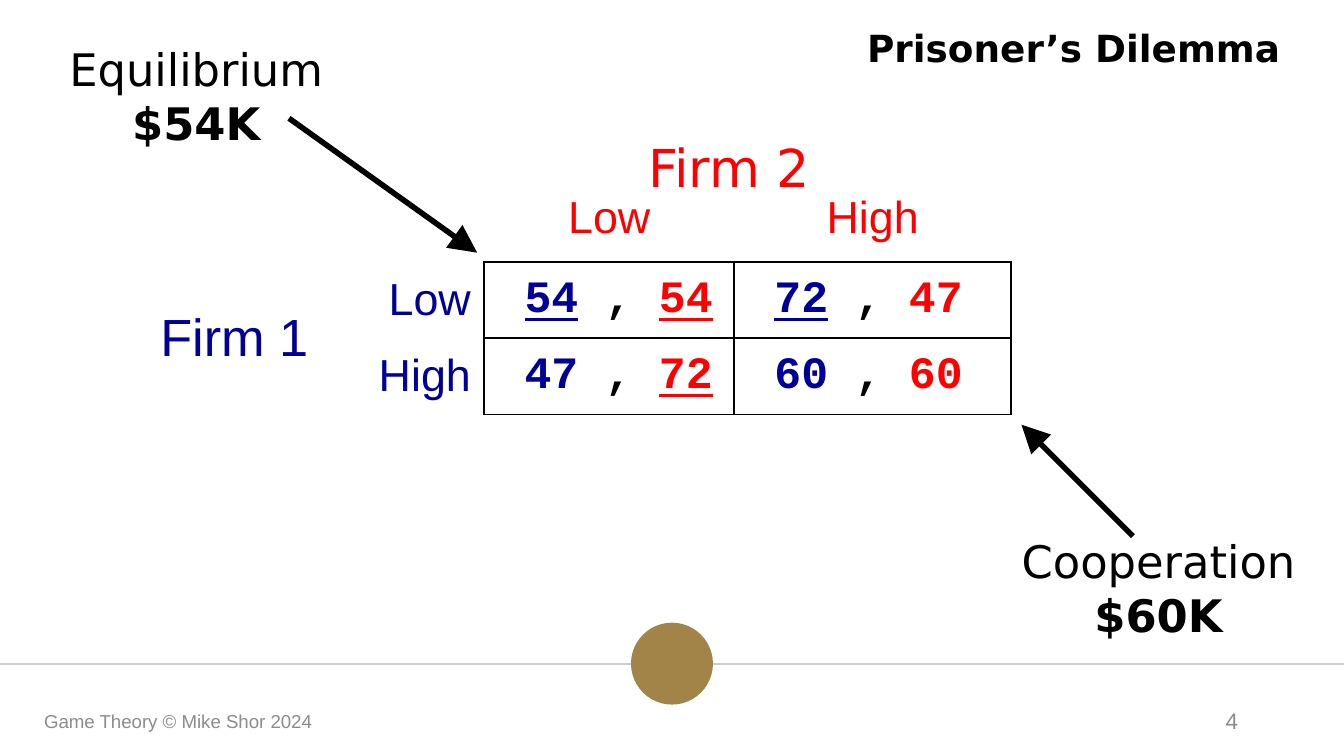
"""Build a Prisoner's Dilemma slide with a payoff table and two labelled outcomes."""
from pptx import Presentation
from pptx.dml.color import RGBColor as RGB
from pptx.enum.shapes import MSO_CONNECTOR as CONN, MSO_SHAPE as SHAPE
from pptx.enum.text import MSO_ANCHOR as ANCHOR, MSO_AUTO_SIZE as AUTO, PP_ALIGN as ALIGN
from pptx.oxml import parse_xml
from pptx.oxml.ns import nsdecls
from pptx.util import Inches, Pt

COLORS = {"black": "000000", "red": "FF0000", "blue": "000099",
          "gray": "8C8C8C", "rule": "CCCCCC", "gold": "A28448"}
SANS, ARIAL, MONO = "DejaVu Sans", "Arial", "Courier New"

prs = Presentation()
prs.slide_width = Inches(10)
prs.slide_height = prs.slide_width * 9 // 16
UNIT = prs.slide_width // 100
s = prs.slides.add_slide(prs.slide_layouts[5])


def style(r, size, font, color, bold=False, underline=False):
    r.font.size, r.font.name = Pt(size), font
    r.font.bold, r.font.underline = bold, underline
    r.font.color.rgb = RGB.from_string(COLORS[color])


def line(x1, y1, x2, y2, color, width, arrow=False):
    c = s.shapes.add_connector(CONN.STRAIGHT, *[round(v * UNIT) for v in (x1, y1, x2, y2)])
    c.line.color.rgb, c.line.width = RGB.from_string(COLORS[color]), Pt(width)
    if arrow:
        c.line._get_or_add_ln().append(parse_xml(
            f'<a:tailEnd {nsdecls("a")} type="triangle" w="lg" len="lg"/>'))
    c._element.spPr.append(parse_xml(f'<a:effectLst {nsdecls("a")}/>'))


line(-0.1, 49.4, 100.1, 49.4, "rule", 0.75)
sp = s.shapes.add_shape(SHAPE.OVAL, *[round(v * UNIT) for v in (46.95, 46.33, 6.1, 6.1)])
sp.shadow.inherit = False
sp.fill.solid()
sp.fill.fore_color.rgb = RGB.from_string(COLORS["gold"])
sp.line.fill.background()

title = s.shapes.title
title.left, title.top, title.width, title.height = [round(v * UNIT) for v in (62, 1.4, 35.8, 4.8)]
tf = title.text_frame
tf.text = "Prisoner’s Dilemma"
tf.auto_size, tf.vertical_anchor = AUTO.NONE, ANCHOR.TOP
tf.paragraphs[0].alignment = ALIGN.CENTER
style(tf.paragraphs[0].runs[0], 20, SANS, "black", bold=True)

labels = [
    ((40.6, 9.6, 27.3, 12.8), ["Firm 2"], 28, SANS, "red", ALIGN.CENTER, ANCHOR.TOP),
    ((3.9, 2.6, 21.4, 9.1), ["Equilibrium", "$54K"], 24, SANS, "black", ALIGN.CENTER, ANCHOR.TOP),
    ((74.6, 39.2, 23.2, 9.1), ["Cooperation", "$60K"], 24, SANS, "black", ALIGN.CENTER, ANCHOR.TOP),
    ((70.6, 52.15, 22.5, 3), ["4"], 12, ARIAL, "gray", ALIGN.RIGHT, ANCHOR.MIDDLE),
    ((2.3, 52.15, 33.8, 3), ["Game Theory © Mike Shor 2024"], 10, ARIAL, "gray", ALIGN.LEFT, ANCHOR.MIDDLE),
]
for place, lines, size, font, color, align, anchor in labels:
    tf = s.shapes.add_textbox(*[round(v * UNIT) for v in place]).text_frame
    tf.word_wrap, tf.vertical_anchor = True, anchor
    tf.text = "\n".join(lines)
    for i, p in enumerate(tf.paragraphs):
        p.alignment = align
        style(p.runs[0], size, font, color, bold=i > 0)

col_widths, row_height = [16.4, 12.1, 18.6, 20.6], 5.67
table = s.shapes.add_table(3, 4, *[round(v * UNIT) for v in (
    7.53, 13.83, sum(col_widths), 3 * row_height)]).table
table.first_row = table.horz_banding = False
table._tbl.tblPr[0].text = "{2D5ABB26-0587-4C30-8999-92F81FD0307C}"
for col, width in zip(table.columns, col_widths):
    col.width = round(width * UNIT)
for row in table.rows:
    row.height = round(row_height * UNIT)
for cell in table.iter_cells():
    cell.fill.background()
table.cell(1, 0).merge(table.cell(2, 0))

headings = [
    (0, 2, "Low", 24, "red", ALIGN.CENTER, ANCHOR.TOP),
    (0, 3, "High", 24, "red", ALIGN.CENTER, ANCHOR.TOP),
    (1, 0, "Firm 1", 28, "blue", ALIGN.RIGHT, ANCHOR.MIDDLE),
    (1, 1, "Low", 24, "blue", ALIGN.RIGHT, ANCHOR.MIDDLE),
    (2, 1, "High", 24, "blue", ALIGN.RIGHT, ANCHOR.MIDDLE),
]
for row, col, text, size, color, align, anchor in headings:
    cell = table.cell(row, col)
    cell.text, cell.vertical_anchor = text, anchor
    p = cell.text_frame.paragraphs[0]
    p.alignment = align
    style(p.runs[0], size, ARIAL, color)

payoffs = {(1, 2): (54, 54), (1, 3): (72, 47), (2, 2): (47, 72), (2, 3): (60, 60)}
for (row, col), (first, second) in payoffs.items():
    cell = table.cell(row, col)
    cell.vertical_anchor = ANCHOR.MIDDLE
    p = cell.text_frame.paragraphs[0]
    best_first = first == max(payoffs[r, col][0] for r in (1, 2))
    best_second = second == max(payoffs[row, c][1] for c in (2, 3))
    for text, color, best in [(" ", "black", False), (str(first), "blue", best_first),
                              (" , ", "black", False), (str(second), "red", best_second)]:
        r = p.add_run()
        r.text = text
        style(r, 24, MONO, color, bold=True, underline=best)
    for i, side in enumerate("LRTB"):
        cell._tc.get_or_add_tcPr().insert(i, parse_xml(
            f'<a:ln{side} {nsdecls("a")} w="{Pt(1)}"><a:solidFill>'
            f'<a:srgbClr val="{COLORS["black"]}"/></a:solidFill></a:ln{side}>'))

line(21.5, 8.8, 35.5, 18.8, "black", 3, arrow=True)
line(84.3, 39.9, 76, 31.6, "black", 3, arrow=True)

prs.save("out.pptx")
